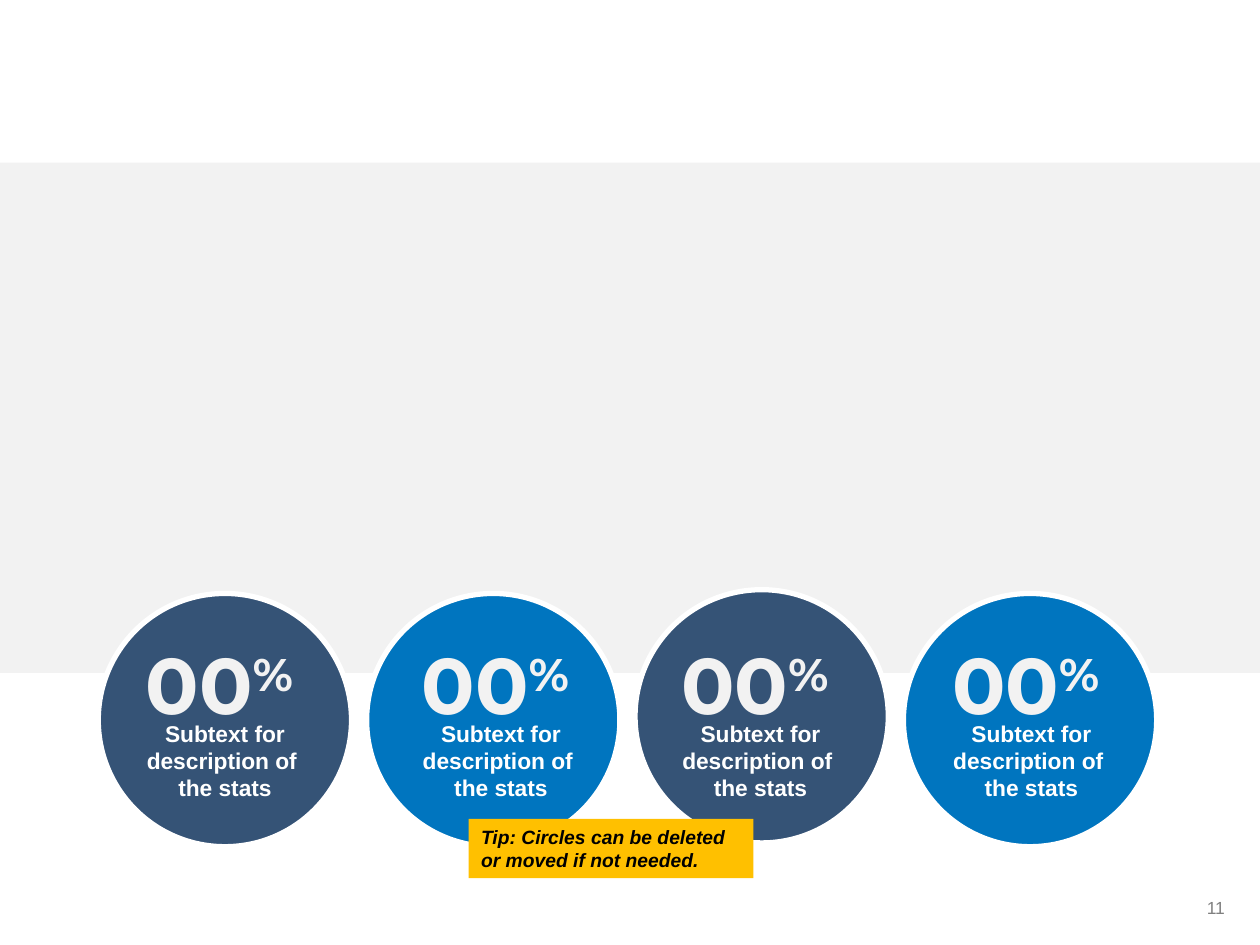
from pptx import Presentation
from pptx.dml.color import RGBColor
from pptx.enum.shapes import MSO_SHAPE
from pptx.enum.text import MSO_ANCHOR, MSO_AUTO_SIZE, PP_ALIGN
from pptx.util import Inches, Pt

RECT, OVAL = MSO_SHAPE.RECTANGLE, MSO_SHAPE.OVAL
TOP, MIDDLE = MSO_ANCHOR.TOP, MSO_ANCHOR.MIDDLE
LEFT, CENTER, RIGHT = PP_ALIGN.LEFT, PP_ALIGN.CENTER, PP_ALIGN.RIGHT
GROW, FIXED = MSO_AUTO_SIZE.SHAPE_TO_FIT_TEXT, MSO_AUTO_SIZE.NONE

WHITE = RGBColor(0xFF, 0xFF, 0xFF)
BLACK = RGBColor(0x00, 0x00, 0x00)
PALE = RGBColor(0xF2, 0xF2, 0xF2)
GRAY = RGBColor(0x80, 0x80, 0x80)
NAVY = RGBColor(0x35, 0x53, 0x76)
BLUE = RGBColor(0x00, 0x75, 0xBF)
GOLD = RGBColor(0xFF, 0xC0, 0x00)

STATS = [
    (4.71, NAVY, 1.06),
    (4.71, BLUE, 3.25),
    (4.68, NAVY, 5.31),
    (4.71, BLUE, 7.46),
]


def add_shape(slide, kind, box, fill, edge=None):
    """Add a filled preset shape with an optional edge colour."""
    shape = slide.shapes.add_shape(kind, *map(Inches, box))
    shape.shadow.inherit = False
    shape.fill.solid()
    shape.fill.fore_color.rgb = fill
    if edge is None:
        shape.line.fill.background()
    else:
        shape.line.color.rgb = edge
        shape.line.width = Pt(3)
    return shape


def add_box(slide, box):
    """Add an empty text box."""
    return slide.shapes.add_textbox(*map(Inches, box))


def set_frame(shape, align=LEFT, anchor=TOP, fit=GROW):
    """Set up wrapping text in a shape and return its paragraph."""
    frame = shape.text_frame
    frame.word_wrap = True
    frame.auto_size = fit
    frame.vertical_anchor = anchor
    para = frame.paragraphs[0]
    para.alignment = align
    return para


def add_run(para, text, size, color, face="Arial", bold=True):
    """Add one styled run and return it."""
    run = para.add_run()
    run.text = text
    font = run.font
    font.size, font.name, font.bold = Pt(size), face, bold
    font.color.rgb = color
    return run


def add_stat(slide, left):
    """Add a large percentage with its centred subtext."""
    para = set_frame(add_box(slide, (left, 5, 1.5, 0.86)))
    add_run(para, "00", 45, PALE, "Montserrat")
    sign = add_run(para, "%", 45, PALE, "Montserrat")
    sign.font._element.set("baseline", "30000")

    para = set_frame(add_box(slide, (left - 0.15, 5.66, 1.75, 0.76)), CENTER)
    add_run(para, "Subtext for description of ", 13, WHITE)
    para.add_line_break()
    add_run(para, "the stats", 13, WHITE)


def add_number(slide):
    """Add the page number."""
    box = add_box(slide, (7.57, 7.05, 2.25, 0.3))
    para = set_frame(box, RIGHT, MIDDLE, FIXED)
    add_run(para, "11", 10, GRAY, bold=False)


def add_tip(slide):
    """Add the gold tip label."""
    shape = add_shape(slide, RECT, (3.72, 6.5, 2.26, 0.47), GOLD)
    text = "Tip: Circles can be deleted or moved if not needed."
    run = add_run(set_frame(shape), text, 11, BLACK)
    run.font.italic = True


def main():
    """Build and save the slide."""
    deck = Presentation()
    deck.slide_width, deck.slide_height = Inches(10), Inches(7.5)
    slide = deck.slides.add_slide(deck.slide_layouts[6])
    add_shape(slide, RECT, (0, 1.29, 10, 4.05), PALE)
    for i, (top, fill, _) in enumerate(STATS):
        add_shape(slide, OVAL, (0.78 + 2.13 * i, top, 2.01, 2.01), fill, WHITE)
    for _, _, left in STATS:
        add_stat(slide, left)
    add_number(slide)
    add_tip(slide)
    deck.save("out.pptx")


if __name__ == "__main__":
    main()
